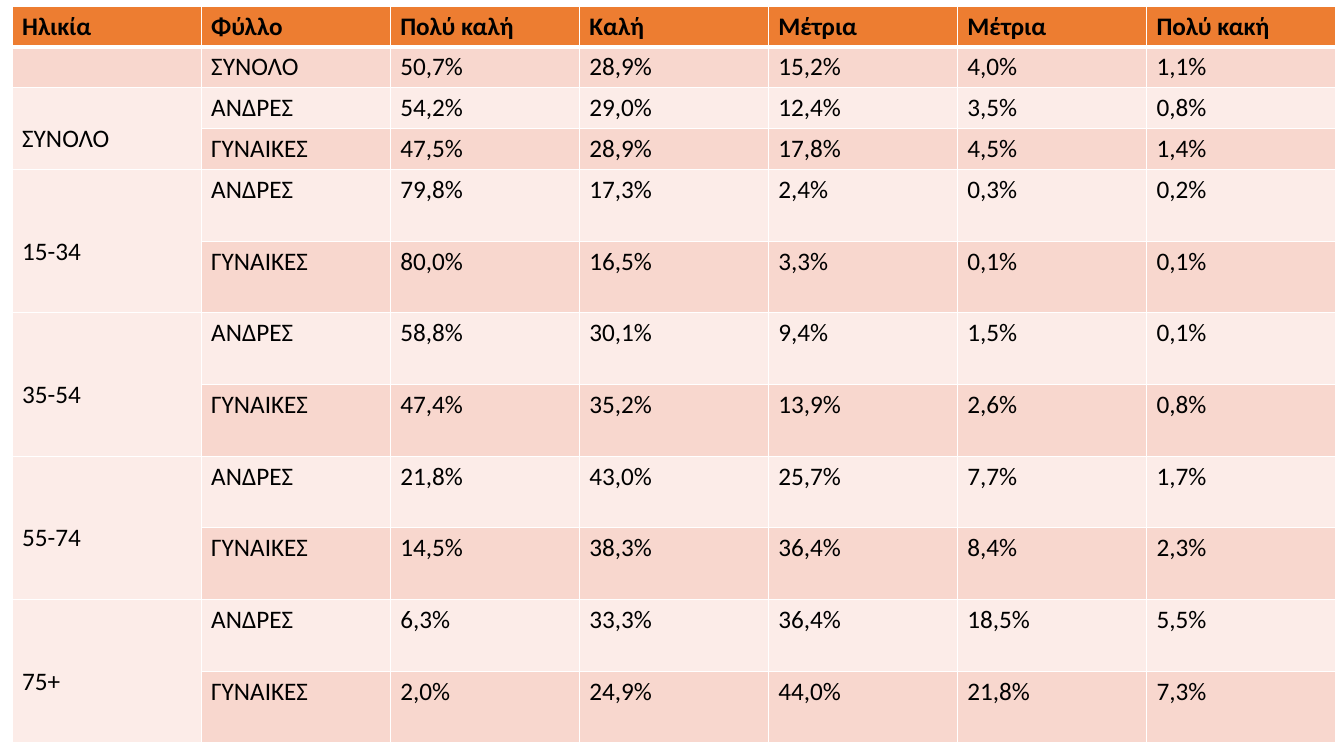
import pptx
import pptx.dml.color
import pptx.oxml
import pptx.oxml.ns
import pptx.util

COLORS = {"header": "ED7D31", "dark_band": "F8D7CE", "light_band": "FCECE8",
          "border": "FFFFFF", "text": "000000"}
HEADINGS = ["Ηλικία", "Φύλλο", "Πολύ καλή", "Καλή", "Μέτρια", "Μέτρια", "Πολύ κακή"]
TOTALS = ["", "ΣΥΝΟΛΟ", "50,7%", "28,9%", "15,2%", "4,0%", "1,1%"]
AGE_GROUPS = {
    "ΣΥΝΟΛΟ": (["54,2%", "29,0%", "12,4%", "3,5%", "0,8%"],
               ["47,5%", "28,9%", "17,8%", "4,5%", "1,4%"]),
    "15-34": (["79,8%", "17,3%", "2,4%", "0,3%", "0,2%"],
              ["80,0%", "16,5%", "3,3%", "0,1%", "0,1%"]),
    "35-54": (["58,8%", "30,1%", "9,4%", "1,5%", "0,1%"],
              ["47,4%", "35,2%", "13,9%", "2,6%", "0,8%"]),
    "55-74": (["21,8%", "43,0%", "25,7%", "7,7%", "1,7%"],
              ["14,5%", "38,3%", "36,4%", "8,4%", "2,3%"]),
    "75+": (["6,3%", "33,3%", "36,4%", "18,5%", "5,5%"],
            ["2,0%", "24,9%", "44,0%", "21,8%", "7,3%"]),
}
LEFT, TOP, COLUMN_WIDTH = 8.64, 4.3, 135.07
SHORT_ROW, TALL_ROW = 29.2, 51.2
SHORT_ROW_COUNT = 4
LINE_HEIGHT, CELL_MARGIN = 22, 3.6


class SlideBuilder:
    def __init__(self, slide):
        self.slide = slide
        self.font_format = {"name": "Calibri", "size": pptx.util.Pt(18)}

    def color(self, name):
        return pptx.dml.color.RGBColor.from_string(COLORS[name])

    def add_table(self, rows, heights):
        frame = self.slide.shapes.add_table(
            len(rows), len(rows[0]), pptx.util.Pt(LEFT), pptx.util.Pt(TOP),
            pptx.util.Pt(COLUMN_WIDTH * len(rows[0])), pptx.util.Pt(sum(heights)))
        table = frame.table
        for column in table.columns:
            column.width = pptx.util.Pt(COLUMN_WIDTH)
        for row, height in zip(table.rows, heights):
            row.height = pptx.util.Pt(height)
        for row_index, texts in enumerate(rows):
            band = "dark_band" if row_index % 2 else "light_band"
            for column_index, text in enumerate(texts):
                cell = table.cell(row_index, column_index)
                self.set_borders(cell, {"L": 1, "R": 1,
                                        "T": 3 if row_index == 1 else 1,
                                        "B": 3 if row_index == 0 else 1})
                self.fill_cell(cell, band if row_index else "header")
                self.write_cell(cell, text, bold=row_index == 0)
        return table

    def set_borders(self, cell, widths):
        properties = cell._tc.get_or_add_tcPr()
        for side, width in widths.items():
            properties.append(pptx.oxml.parse_xml(
                f'<a:ln{side} {pptx.oxml.ns.nsdecls("a")} w="{pptx.util.Pt(width)}">'
                f'<a:solidFill><a:srgbClr val="{COLORS["border"]}"/></a:solidFill>'
                f'</a:ln{side}>'))

    def fill_cell(self, cell, color_name):
        cell.fill.solid()
        cell.fill.fore_color.rgb = self.color(color_name)

    def write_cell(self, cell, text, bold):
        if not text:
            return
        run = cell.text_frame.paragraphs[0].add_run()
        run.text = text
        for attribute, value in {**self.font_format, "bold": bold}.items():
            setattr(run.font, attribute, value)
        run.font.color.rgb = self.color("text")

    def merge_age_cell(self, table, row_index, lines_above):
        """Span an age label over both sexes and lower it by whole text lines."""
        cell = table.cell(row_index, 0)
        cell.merge(table.cell(row_index + 1, 0))
        self.fill_cell(cell, "light_band")
        cell.margin_top = pptx.util.Pt(CELL_MARGIN + lines_above * LINE_HEIGHT)


def main():
    presentation = pptx.Presentation()
    presentation.slide_width = pptx.util.Pt(960)
    presentation.slide_height = pptx.util.Pt(540)
    builder = SlideBuilder(presentation.slides.add_slide(presentation.slide_layouts[6]))

    rows = [HEADINGS, TOTALS]
    for age, (men, women) in AGE_GROUPS.items():
        rows += [[age, "ΑΝΔΡΕΣ", *men], ["", "ΓΥΝΑΙΚΕΣ", *women]]
    heights = [SHORT_ROW if index < SHORT_ROW_COUNT else TALL_ROW
               for index in range(len(rows))]
    table = builder.add_table(rows, heights)
    for row_index in range(2, len(rows), 2):
        builder.merge_age_cell(table, row_index, 1 if row_index < SHORT_ROW_COUNT else 2)

    presentation.save("out.pptx")


if __name__ == "__main__":
    main()
